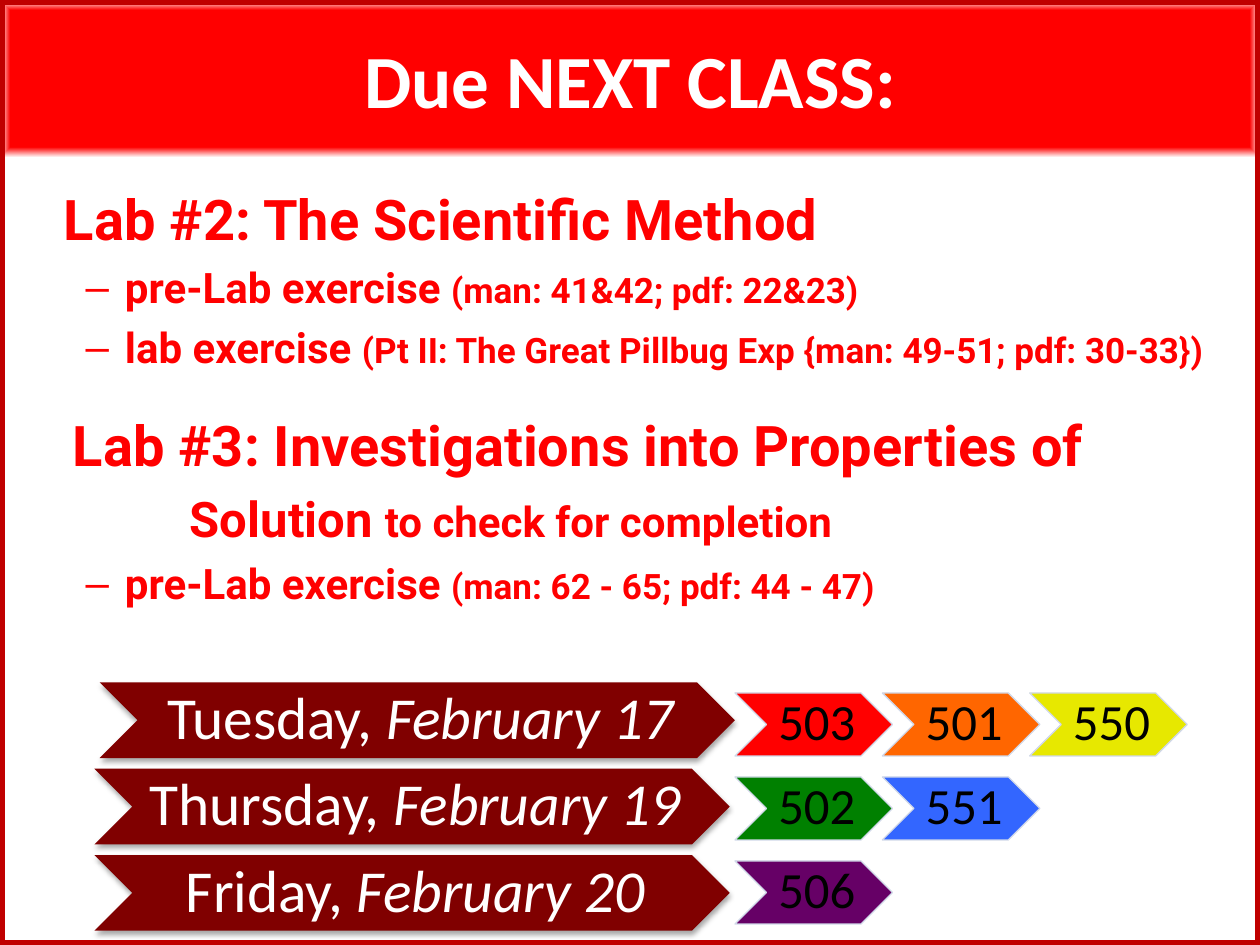
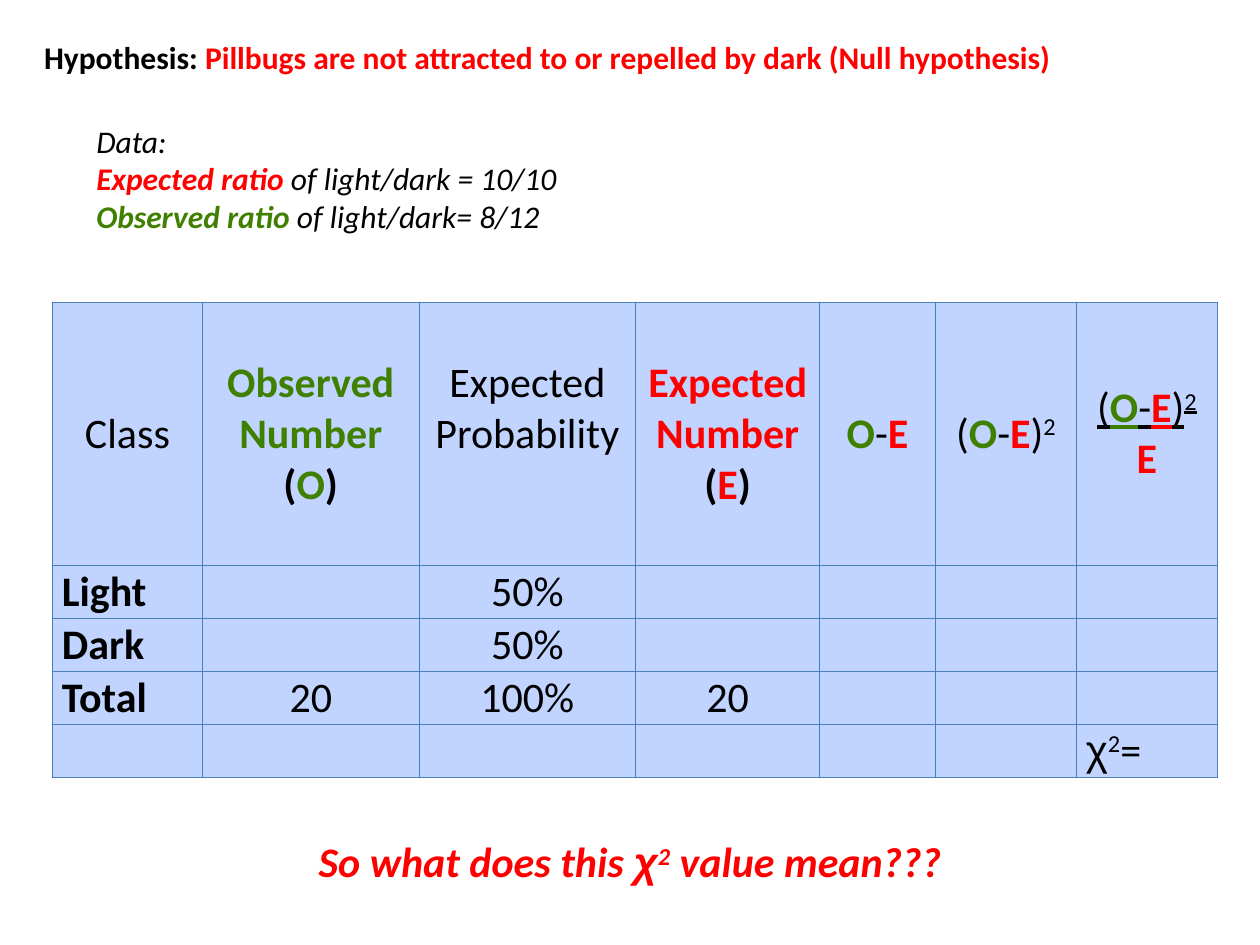
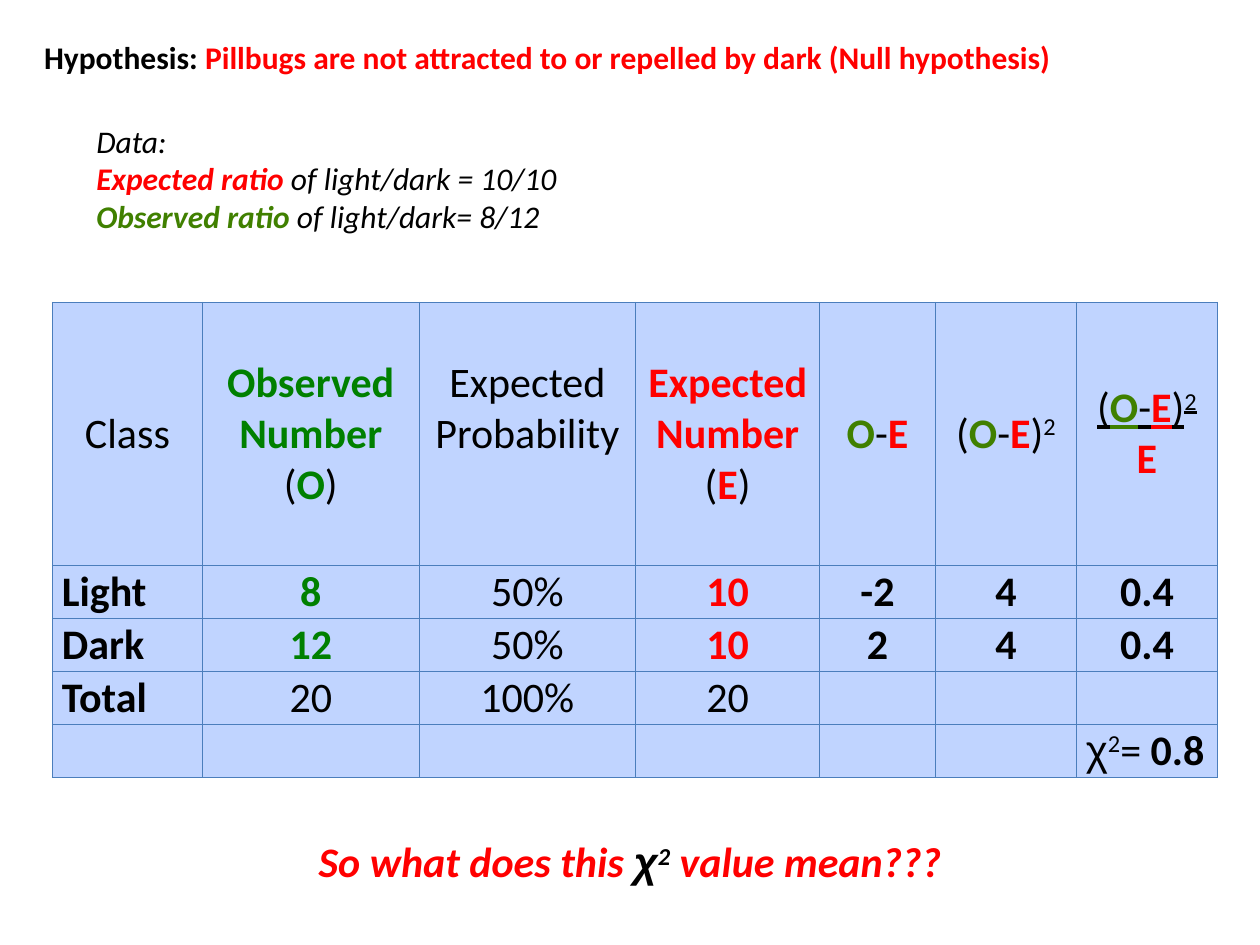
from lxml import etree
from pptx import Presentation
from pptx.dml.color import RGBColor as RGB
from pptx.enum.shapes import MSO_SHAPE as Shape
from pptx.enum.text import MSO_ANCHOR as Anchor, MSO_AUTO_SIZE as Auto, PP_ALIGN as Align
from pptx.oxml import parse_xml
from pptx.oxml.ns import nsdecls, qn
from pptx.util import Pt

# Colours
RED = RGB(0xFF, 0x00, 0x00)
CRIMSON = RGB(0xC0, 0x00, 0x00)
MAROON = RGB(0x80, 0x00, 0x00)
ORANGE = RGB(0xFF, 0x66, 0x00)
YELLOW = RGB(0xE7, 0xE8, 0x00)
GREEN = RGB(0x00, 0x80, 0x00)
OLIVE = RGB(0x40, 0x80, 0x00)
BLUE = RGB(0x33, 0x66, 0xFF)
PURPLE = RGB(0x66, 0x00, 0x66)
PALE = RGB(0xD0, 0xD8, 0xE8)
SKY = RGB(0xC0, 0xD4, 0xFF)
RULE = RGB(0x4B, 0x7E, 0xBC)
BLACK = RGB(0x00, 0x00, 0x00)
WHITE = RGB(0xFF, 0xFF, 0xFF)

BODY = "Calibri"
HEAVY = "Roboto"
GREEK = "Arial"

COLS = [85.7, 123.8, 123.8, 105.1, 66.2, 80.6, 80.6]
ROWS = [150.5] + [30.24] * 4


# Text: a run is (text, colour, marks, size); marks are b, i, u, ^ raised, g Greek
def add_run(para, size, font, text, color=BLACK, marks="", own=None):
    run = para.add_run()
    run.text = text
    face = run.font
    face.name = GREEK if "g" in marks else font
    face.size = Pt(own or size)
    face.color.rgb = color
    face.bold = "b" in marks
    face.italic = "i" in marks
    face.underline = "u" in marks
    if "^" in marks:
        run._r.get_or_add_rPr().set("baseline", "30000")


def write(frame, paras, size, align=Align.LEFT, font=BODY):
    frame.word_wrap = True
    for i, runs in enumerate(paras):
        para = frame.paragraphs[0] if i == 0 else frame.add_paragraph()
        para.alignment = align
        for run in runs:
            add_run(para, size, font, *run)


def add_text(slide, box, paras, size, align=Align.LEFT, font=BODY):
    shape = slide.shapes.add_textbox(*map(Pt, box))
    write(shape.text_frame, paras, size, align, font)
    return shape.text_frame


def set_title(slide, box, runs, size, align, anchor):
    title = slide.shapes.title
    title.left, title.top, title.width, title.height = map(Pt, box)
    frame = title.text_frame
    frame.auto_size = Auto.NONE
    frame.vertical_anchor = anchor
    write(frame, [runs], size, align)
    return title


def indent(para, left, before, bullet=False):
    para.space_before = Pt(before)
    props = para._p.get_or_add_pPr()
    props.set("marL", str(Pt(left)))
    props.set("indent", str(Pt(-22.5 if bullet else 0)))
    if bullet:
        etree.SubElement(props, qn("a:buFont")).set("typeface", GREEK)
        etree.SubElement(props, qn("a:buChar")).set("char", "–")


# Shapes
def fade(shape):
    shape._element.spPr.append(parse_xml(
        f'<a:gradFill {nsdecls("a")} rotWithShape="1"><a:gsLst>'
        f'<a:gs pos="87000"><a:srgbClr val="{RED}"/></a:gs>'
        f'<a:gs pos="100000"><a:srgbClr val="{WHITE}"/></a:gs></a:gsLst>'
        '<a:path path="rect"><a:fillToRect l="50000" t="50000" r="50000" b="50000"/>'
        '</a:path></a:gradFill>'))
    shape.line.color.rgb = WHITE
    shape.line.width = Pt(0.75)


def add_arrow(slide, box, fill, runs, size):
    shape = slide.shapes.add_shape(Shape.CHEVRON, *map(Pt, box))
    shape.shadow.inherit = False
    shape.fill.solid()
    shape.fill.fore_color.rgb = fill
    shape.line.fill.background()
    frame = shape.text_frame
    frame.margin_left, frame.margin_right = Pt(3.6), 0
    frame.margin_top = frame.margin_bottom = Pt(1.44)
    frame.vertical_anchor = Anchor.MIDDLE
    write(frame, [runs], size, Align.CENTER)
    frame.paragraphs[0].line_spacing = 0.9
    return shape


def add_day(slide, left, top, day, date):
    runs = [(day + ", ", WHITE), (date, WHITE, "i")]
    shape = add_arrow(slide, (left, top, 363, 43.2), MAROON, runs, 34)
    glow = shape._element.spPr.find(qn("a:effectLst"))
    glow.append(parse_xml(
        f'<a:outerShdw {nsdecls("a")} blurRad="{Pt(3.1)}" dist="{Pt(1.8)}" dir="5400000" '
        f'rotWithShape="0"><a:srgbClr val="{BLACK}"><a:alpha val="35000"/></a:srgbClr>'
        '</a:outerShdw>'))


def add_class(slide, left, top, code, fill):
    shape = add_arrow(slide, (left, top, 90, 36), fill, [(code,)], 29)
    shape.line.color.rgb = PALE
    shape.line.width = Pt(0.75)


def add_frame(slide):
    frame = slide.shapes.add_shape(Shape.RECTANGLE, 0, 0, Pt(720), Pt(540))
    frame.shadow.inherit = False
    frame.fill.background()
    frame.line.color.rgb = CRIMSON
    frame.line.width = Pt(6)


# Table
def style(cell):
    cell.fill.solid()
    cell.fill.fore_color.rgb = SKY
    cell.margin_left = cell.margin_right = Pt(5.4)
    cell.margin_top = cell.margin_bottom = 0
    cell.vertical_anchor = Anchor.MIDDLE
    props = cell._tc.get_or_add_tcPr()
    for i, side in enumerate("LRTB"):
        props.insert(i, parse_xml(
            f'<a:ln{side} {nsdecls("a")} w="{Pt(0.75)}"><a:solidFill>'
            f'<a:srgbClr val="{RULE}"/></a:solidFill></a:ln{side}>'))


def add_grid(slide, rows):
    grid = slide.shapes.add_table(
        len(ROWS), len(COLS), Pt(30), Pt(172.8), Pt(sum(COLS)), Pt(sum(ROWS))).table
    for col, width in zip(grid.columns, COLS):
        col.width = Pt(width)
    for row, height in zip(grid.rows, ROWS):
        row.height = Pt(height)
    for r, row in enumerate(rows):
        for c, paras in enumerate(row):
            cell = grid.cell(r, c)
            style(cell)
            left = r > 0 and (c == 0 or r == len(ROWS) - 1)
            write(cell.text_frame, paras, 24, Align.LEFT if left else Align.CENTER)
    # The plain heading sits level with the first two lines of its neighbours
    grid.cell(0, 2).margin_bottom = Pt(29)


def head(green, marks):
    diff = [("O", OLIVE, "b"), ("-",), ("E", RED, "b")]
    power = [("(",), *diff, (")",), ("2", BLACK, "^")]
    under = [(text, *(rest[:1] or [BLACK]), "".join(rest[1:]) + "u") for text, *rest in power]
    return [
        [[("Class",)]],
        [[("Observed Number ", green, "b"), ("(", BLACK, marks), ("O", green, "b"),
          (")", BLACK, marks)]],
        [[("Expected Probability",)]],
        [[("Expected Number", RED, "b")],
         [("(", BLACK, marks), ("E", RED, "b"), (")", BLACK, marks)]],
        [diff],
        [power],
        [under, [("E", RED, "b")]],
    ]


def line(name, seen, odds, due, rest, bold=True):
    tones = [BLACK, GREEN, BLACK, RED, BLACK, BLACK, BLACK]
    cells = []
    for c, (text, tone) in enumerate(zip([name, seen, odds, due, *rest], tones)):
        strong = c == 0 or (bold and c != 2)
        cells.append([[(text, tone if bold else BLACK, "b" if strong else "")]] if text else [])
    return cells


# Slides
def due_slide(slide):
    title = set_title(slide, (0, 0, 720, 90), [("Due NEXT CLASS:", WHITE, "b")], 42.9,
                      Align.CENTER, Anchor.MIDDLE)
    fade(title)

    # Left indent, space before, bullet, then (text, size) pairs
    tasks = [
        (23.4, 7.4, False, [("Lab #2: The Scientific Method", 32)]),
        (58.3, 5.6, True, [("pre-Lab exercise ", 24), ("(man: 41&42; pdf: 22&23)", 20)]),
        (58.3, 5.6, True, [("lab exercise ", 24),
                           ("(Pt II: The Great Pillbug Exp {man: 49-51; pdf: 30-33})", 20)]),
        (28.5, 21.8, False, [("Lab #3: Investigations into Properties of", 32)]),
        (95.4, 6.4, False, [("Solution ", 28), ("to check for completion", 24)]),
        (58.3, 5.6, True, [("pre-Lab exercise ", 24), ("(man: 62 - 65; pdf: 44 - 47)", 20)]),
    ]
    paras = [[(text, RED, "b", size) for text, size in task[3]] for task in tasks]
    frame = add_text(slide, (6, 102, 708, 408), paras, 24, font=HEAVY)
    for para, (left, before, bullet, _) in zip(frame.paragraphs, tasks):
        indent(para, left, before, bullet)
    add_frame(slide)

    days = [
        (57, "Tuesday", "February 17", [("503", RED), ("501", ORANGE), ("550", YELLOW)]),
        (54, "Thursday", "February 19", [("502", GREEN), ("551", BLUE)]),
        (54, "Friday", "February 20", [("506", PURPLE)]),
    ]
    for i, (left, day, date, codes) in enumerate(days):
        add_day(slide, left, 390 + 49.3 * i, day, date)
        for j, (code, fill) in enumerate(codes):
            add_class(slide, 420 + 84.2 * j, 396 + 48 * i, code, fill)


def test_slide(slide, rows, tone):
    set_title(slide, (18, 18, 684, 29), [
        ("Hypothesis: ", BLACK, "b"),
        ("Pillbugs are not attracted to or repelled by dark (Null hypothesis)", RED, "b"),
    ], 18, Align.JUSTIFY, Anchor.TOP)
    add_grid(slide, rows)
    add_text(slide, (48, 66, 546, 73), [
        [("Data:", BLACK, "i")],
        [("Expected ratio ", RED, "bi"), ("of light/dark = 10/10", BLACK, "i")],
        [("Observed ratio ", OLIVE, "bi"), ("of light/dark= 8/12", BLACK, "i")],
    ], 18)
    add_text(slide, (36, 474, 648, 36), [[
        ("So what does this ", RED, "bi"), ("χ", tone, "big"), ("2", tone, "bi^"),
        (" value mean???", RED, "bi"),
    ]], 24, Align.CENTER)


def main():
    deck = Presentation()
    deck.slide_width, deck.slide_height = Pt(720), Pt(540)
    due, ask, tell = [deck.slides.add_slide(deck.slide_layouts[5]) for _ in range(3)]
    due_slide(due)

    none = ["", "", ""]
    total = line("Total", "20", "100%", "20", none, bold=False)
    chi = [("χ", BLACK, "g"), ("2", BLACK, "^")]
    blank = [[] for _ in COLS[1:]]
    test_slide(ask, [
        head(OLIVE, "b"),
        line("Light", "", "50%", "", none),
        line("Dark", "", "50%", "", none),
        total,
        [*blank, [[*chi, ("=",)]]],
    ], RED)
    test_slide(tell, [
        head(GREEN, ""),
        line("Light", "8", "50%", "10", ["-2", "4", "0.4"]),
        line("Dark", "12", "50%", "10", ["2", "4", "0.4"]),
        total,
        [*blank, [[*chi, ("= ",), ("0.8", BLACK, "b")]]],
    ], BLACK)
    deck.save("out.pptx")


if __name__ == "__main__":
    main()
